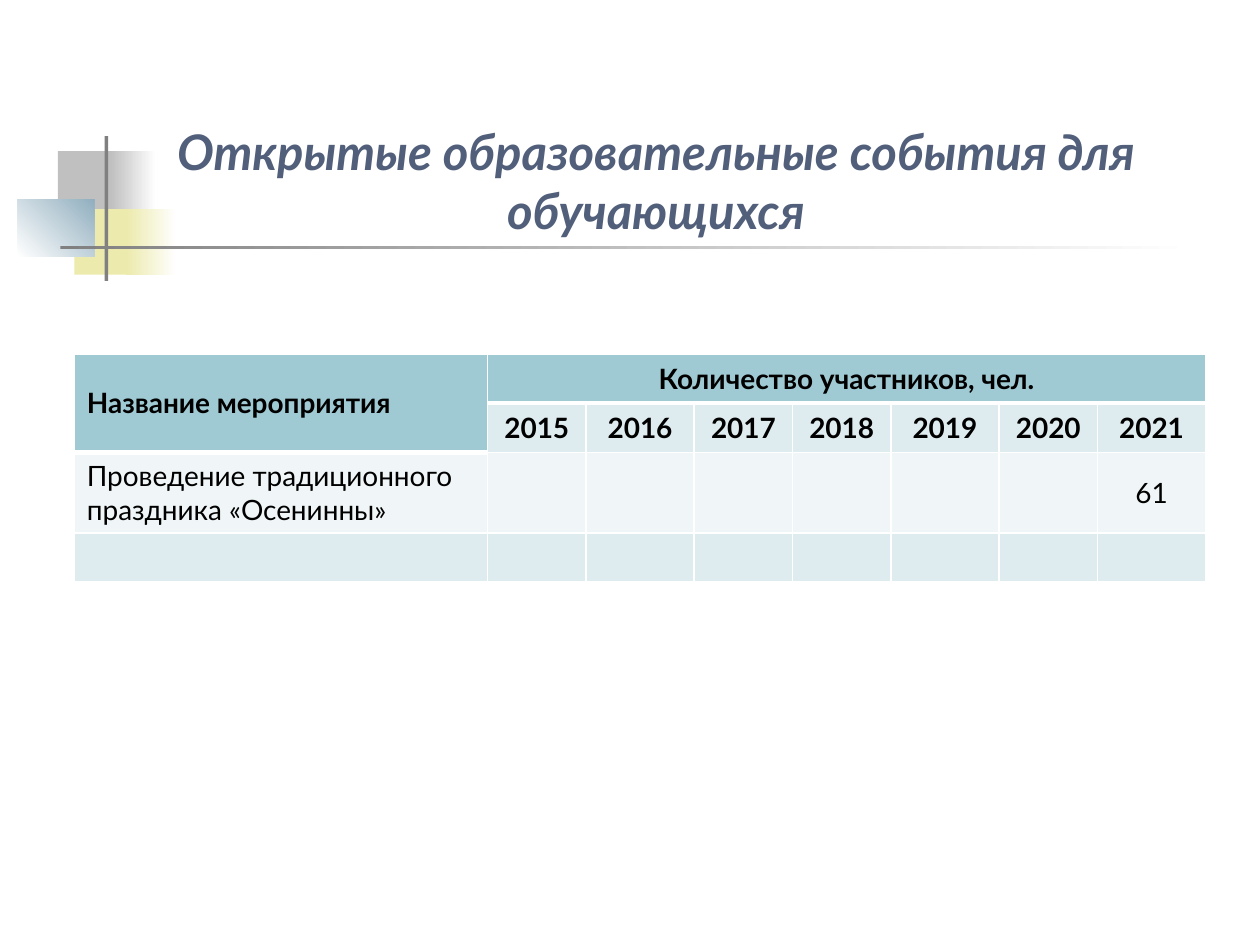
import pptx
import pptx.util
import pptx.dml.color
import pptx.enum.shapes
import pptx.enum.text
import pptx.oxml
import pptx.oxml.ns
from dataclasses import dataclass
from lxml import etree

Inches = pptx.util.Inches
Pt = pptx.util.Pt
ALIGN = pptx.enum.text.PP_ALIGN
ANCHOR = pptx.enum.text.MSO_ANCHOR
qn = pptx.oxml.ns.qn


@dataclass(frozen=True)
class Theme:
    font: str = "Lato"
    title_size: int = 28
    table_size: int = 16
    title: str = "515F7B"
    text: str = "000000"
    white: str = "FFFFFF"
    gray: str = "C0C0C0"
    dark_gray: str = "808080"
    yellow: str = "ECEAAC"
    blue: str = "91AFBF"
    header: str = "9FCAD3"
    band_dark: str = "DFECEF"
    band_light: str = "F0F6F7"
    border: int = 1
    header_border: int = 3


THEME = Theme()
YEARS = ["2015", "2016", "2017", "2018", "2019", "2020", "2021"]
EVENTS = [
    ["Проведение традиционного праздника «Осенинны»"] + [""] * 6 + ["61"],
    [""] * 8,
]


def rgb(color):
    return pptx.dml.color.RGBColor.from_string(color)


def set_values(target, values):
    for name, value in values.items():
        setattr(target, name, value)


def write_text(frame, text, align, size, color, **styles):
    paragraph = frame.paragraphs[0]
    paragraph.alignment = align
    run = paragraph.add_run()
    run.text = text
    set_values(run.font, {"name": THEME.font, "size": Pt(size), **styles})
    run.font.color.rgb = rgb(color)


def add_block(slide, box, colors, angle=0):
    """Draw a rectangle with one solid colour or a two-colour gradient."""
    shape = slide.shapes.add_shape(
        pptx.enum.shapes.MSO_SHAPE.RECTANGLE, *map(Inches, box))
    shape.shadow.inherit = False
    shape.line.fill.background()
    if len(colors) == 1:
        shape.fill.solid()
        shape.fill.fore_color.rgb = rgb(colors[0])
        return
    shape.fill.gradient()
    shape.fill.gradient_angle = angle
    for stop, color, position in zip(shape.fill.gradient_stops, colors, (0, 1)):
        stop.color.rgb = rgb(color)
        stop.position = position


def add_ornament(slide, left, top):
    """Overlapping squares crossed by a vertical bar and a fading rule."""
    blocks = [
        ((0.32, 0.12, 0.48, 0.52), [THEME.gray], 0),
        ((0.74, 0.12, 0.36, 0.52), [THEME.gray, THEME.white], 0),
        ((0.45, 0.58, 0.46, 0.52), [THEME.yellow], 0),
        ((0.86, 0.58, 0.4, 0.52), [THEME.yellow, THEME.white], 0),
        ((0, 0.5, 0.61, 0.46), [THEME.white, THEME.blue], 45),
        ((0.69, 0, 0.03, 1.15), [THEME.dark_gray], 0),
        ((0.34, 0.87, 9, 0.03), [THEME.dark_gray, THEME.white], 0),
    ]
    for (x, y, width, height), colors, angle in blocks:
        add_block(slide, (left + x, top + y, width, height), colors, angle)


def add_title(slide, box):
    frame = slide.shapes.add_textbox(*map(Inches, box)).text_frame
    set_values(frame, {"word_wrap": True, "vertical_anchor": ANCHOR.BOTTOM})
    write_text(frame, "Открытые образовательные события для обучающихся",
               ALIGN.CENTER, THEME.title_size, THEME.title, bold=True, italic=True)


def set_borders(cell, bottom_width):
    """Insert white edges before the cell fill, in schema order."""
    properties = cell._tc.get_or_add_tcPr()
    widths = {"a:lnL": THEME.border, "a:lnR": THEME.border,
              "a:lnT": THEME.border, "a:lnB": bottom_width}
    for index, (tag, width) in enumerate(widths.items()):
        line = etree.Element(qn(tag), w=str(Pt(width)))
        fill = etree.SubElement(line, qn("a:solidFill"))
        etree.SubElement(fill, qn("a:srgbClr"), val=THEME.white)
        properties.insert(index, line)


def fill_cell(cell, text, color, align, bold, bottom_width):
    cell.vertical_anchor = ANCHOR.MIDDLE
    cell.fill.solid()
    cell.fill.fore_color.rgb = rgb(color)
    set_borders(cell, bottom_width)
    if text:
        write_text(cell.text_frame, text, align, THEME.table_size, THEME.text, bold=bold)
    else:
        # Keeps empty rows at the height of the table's type size
        etree.SubElement(cell.text_frame.paragraphs[0]._p, qn("a:endParaRPr"),
                         sz=str(THEME.table_size * 100))


def add_participants_table(slide, box):
    rows = [
        ["Название мероприятия", "Количество участников, чел."] + [""] * 6,
        [""] + YEARS,
        *EVENTS,
    ]
    row_colors = [THEME.header, THEME.band_dark, THEME.band_light, THEME.band_dark]
    column_widths = [3.28, 0.78, 0.86, 0.78, 0.78, 0.86, 0.78, 0.86]
    row_heights = [0.39, 0.39, 0.64, 0.39]
    table = slide.shapes.add_table(
        len(rows), len(column_widths), *map(Inches, box)).table
    for column, width in zip(table.columns, column_widths):
        column.width = Inches(width)
    for row, height in zip(table.rows, row_heights):
        row.height = Inches(height)

    # Header spans: event name over two rows, participants over all years
    table.cell(0, 0).merge(table.cell(1, 0))
    table.cell(0, 1).merge(table.cell(0, len(YEARS)))

    for row_index, texts in enumerate(rows):
        for column_index, text in enumerate(texts):
            is_label = column_index == 0
            is_header = row_index == 0 or (row_index == 1 and is_label)
            fill_cell(
                table.cell(row_index, column_index), text,
                THEME.header if is_header else row_colors[row_index],
                ALIGN.LEFT if is_label else ALIGN.CENTER,
                row_index < 2,
                THEME.header_border if is_header else THEME.border)


def main():
    presentation = pptx.Presentation()
    set_values(presentation, {"slide_width": Inches(10), "slide_height": Inches(7.5)})
    slide = presentation.slides.add_slide(presentation.slide_layouts[6])
    slide.background.fill.solid()
    slide.background.fill.fore_color.rgb = rgb(THEME.white)
    add_ornament(slide, 0.14, 1.08)
    add_title(slide, (0.94, 0.7, 8.53, 1.25))
    add_participants_table(slide, (0.59, 2.81, 8.98, 1.81))
    presentation.save("out.pptx")


if __name__ == "__main__":
    main()
